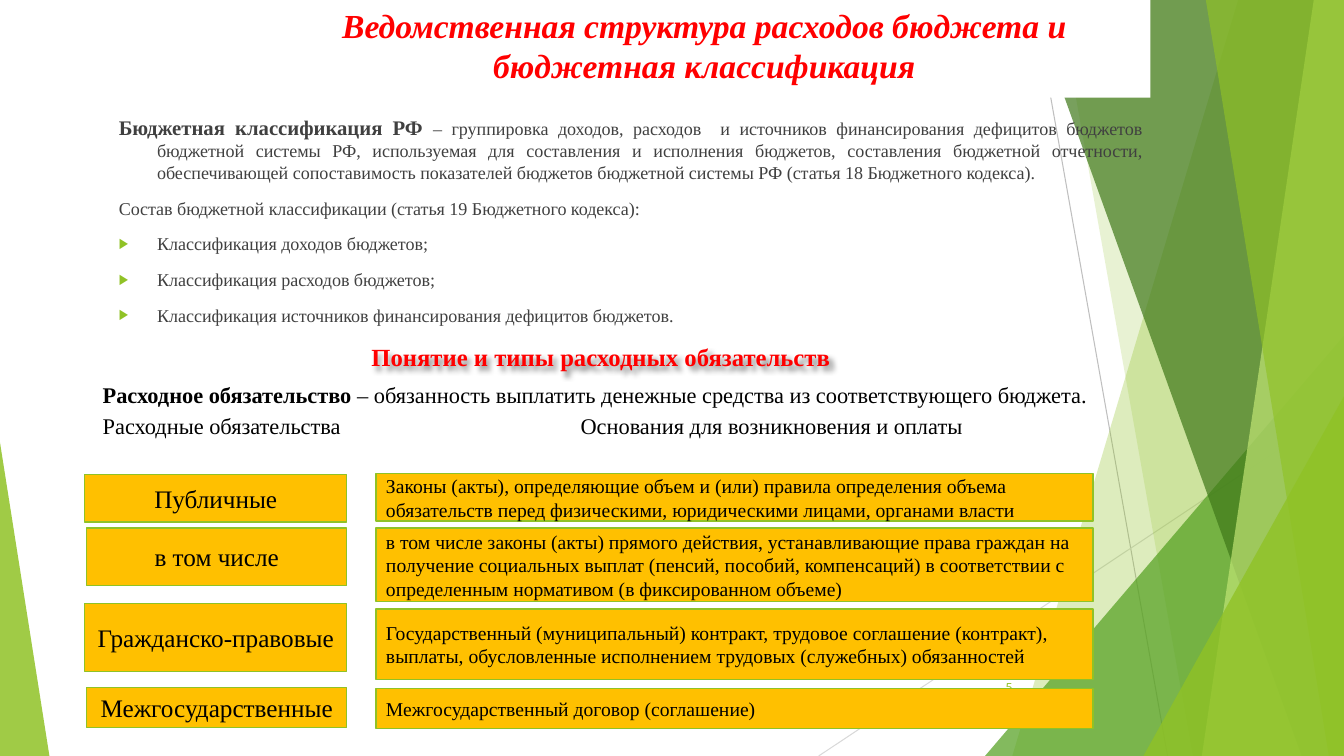
"""Build the slide on budget structure and types of spending obligations."""
from lxml.etree import SubElement
from pptx import Presentation
from pptx.dml.color import RGBColor
from pptx.enum.shapes import MSO_CONNECTOR as Connector, MSO_SHAPE as Shape
from pptx.enum.text import MSO_ANCHOR as Anchor, PP_ALIGN as Align
from pptx.oxml.ns import qn
from pptx.util import Inches, Pt

COLORS = {
    "lime": "90C226", "green": "54A021", "dark": "3F7819", "pale": "C0E474",
    "amber": "FFC000", "red": "FF0000", "black": "000000", "gray": "404040",
    "white": "FFFFFF", "line": "BFBFBF", "light_line": "D9D9D9",
}
WIDTH, HEIGHT = 13.33, 7.5


class Page:
    def __init__(self, deck, font):
        self.slide = deck.slides.add_slide(deck.slide_layouts[5])
        self.shapes = self.slide.shapes
        self.font = font

    def color(self, name):
        return RGBColor.from_string(COLORS[name])

    def paint(self, shape, fill, alpha=100, line=None):
        shape.shadow.inherit = False
        shape.fill.solid()
        shape.fill.fore_color.rgb = self.color(fill)
        if alpha < 100:
            tint = shape.fill._xPr.find(".//" + qn("a:srgbClr"))
            SubElement(tint, qn("a:alpha"), val=str(alpha * 1000))
        if line:
            shape.line.color.rgb = self.color(line)
            shape.line.width = Pt(1)
        else:
            shape.line.fill.background()

    def span(self, para, text, size, color, bold=False, italic=False, font=None):
        span = para.add_run()
        span.text = text
        span.font.name = font or self.font
        span.font.size = Pt(size)
        span.font.bold = bold
        span.font.italic = italic
        span.font.color.rgb = self.color(color)

    def frame(self, shape, anchor=Anchor.TOP):
        frame = shape.text_frame
        frame.word_wrap = True
        frame.vertical_anchor = anchor
        frame.margin_left = frame.margin_right = Inches(0.1)
        frame.margin_top = frame.margin_bottom = Inches(0.05)
        return frame

    def title(self, text, place):
        title = self.shapes.title
        title.left, title.top, title.width, title.height = map(Inches, place)
        self.paint(title, "white")
        para = self.frame(title).paragraphs[0]
        para.alignment = Align.CENTER
        self.span(para, text, 24, "red", True, True)
        title.element.getparent().append(title.element)

    def text(self, place, paragraphs, align=None, anchor=Anchor.TOP, before=0):
        box = self.shapes.add_textbox(*map(Inches, place))
        frame = self.frame(box, anchor)
        for index, spans in enumerate(paragraphs):
            para = frame.add_paragraph() if index else frame.paragraphs[0]
            para.alignment = align
            para.space_before = Pt(before)
            for span in spans:
                self.span(para, *span)
        return box

    def hang(self, para, indent, bullet=None):
        props = para._p.get_or_add_pPr()
        props.set("marL", str(Inches(indent)))
        props.set("indent", str(-Inches(indent)))
        if bullet:
            tint = SubElement(props, qn("a:buClr"))
            SubElement(tint, qn("a:srgbClr"), val=COLORS["lime"])
            SubElement(props, qn("a:buSzPct"), val="80000")
            SubElement(props, qn("a:buFont"), typeface="Arial")
            SubElement(props, qn("a:buChar"), char=bullet)

    def tab(self, para, position):
        tabs = SubElement(para._p.get_or_add_pPr(), qn("a:tabLst"))
        SubElement(tabs, qn("a:tab"), pos=str(Inches(position)), algn="l")

    def text_shadow(self, box):
        effects = SubElement(box.element.spPr, qn("a:effectLst"))
        shadow = SubElement(effects, qn("a:outerShdw"), blurRad="38100",
                            dist="38100", dir="2700000")
        tint = SubElement(shadow, qn("a:srgbClr"), val=COLORS["black"])
        SubElement(tint, qn("a:alpha"), val="43000")

    def box(self, place, text, size, align):
        box = self.shapes.add_shape(Shape.RECTANGLE, *map(Inches, place))
        self.paint(box, "amber", line="lime")
        para = self.frame(box, Anchor.MIDDLE).paragraphs[0]
        para.alignment = align
        self.span(para, text, size, "black")

    def line(self, ends, color):
        line = self.shapes.add_connector(Connector.STRAIGHT, *map(Inches, ends))
        line.line.color.rgb = self.color(color)
        line.line.width = Pt(0.75)
        SubElement(line.element.spPr, qn("a:effectLst"))

    def band(self, top_x, bottom_x, color, alpha):
        builder = self.shapes.build_freeform(Inches(top_x), 0)
        corners = [(WIDTH, 0), (WIDTH, HEIGHT), (bottom_x, HEIGHT)]
        builder.add_line_segments([(Inches(x), Inches(y)) for x, y in corners])
        self.paint(builder.convert_to_shape(), color, alpha)

    def triangle(self, left, top, width, apex, color, alpha):
        place = (left, top, width, HEIGHT - top)
        shape = self.shapes.add_shape(Shape.ISOSCELES_TRIANGLE, *map(Inches, place))
        shape.adjustments[0] = apex
        self.paint(shape, color, alpha)


def draw_backdrop(page):
    page.line((10.25, 0, 11.58, HEIGHT), "line")
    page.line((WIDTH, 4.03, 8.12, HEIGHT), "light_line")
    page.band(12.28, 10.04, "lime", 30)
    page.band(10.5, 11.83, "lime", 20)
    page.triangle(9.77, 3.33, 3.56, 1, "green", 72)
    page.band(10.21, 12.91, "dark", 70)
    page.band(13.03, 11.92, "pale", 70)
    page.band(11.96, 13.18, "lime", 65)
    page.triangle(11.34, 3.93, 1.99, 1, "lime", 80)
    page.triangle(0, 4.39, 0.49, 0, "lime", 85)


def draw_classification(page):
    lines = [
        "Состав бюджетной классификации (статья 19 Бюджетного кодекса):",
        "Классификация доходов бюджетов;",
        "Классификация расходов бюджетов;",
        "Классификация источников финансирования дефицитов бюджетов.",
    ]
    definition = [
        ("Бюджетная классификация РФ ", 14.8, "gray", True),
        ("– группировка доходов, расходов  и источников финансирования дефицитов "
         "бюджетов бюджетной системы РФ, используемая для составления и исполнения "
         "бюджетов, составления бюджетной отчетности, обеспечивающей сопоставимость "
         "показателей бюджетов бюджетной системы РФ (статья 18 Бюджетного кодекса).",
         12.9, "gray"),
    ]
    paragraphs = [definition] + [[(line, 12.9, "gray")] for line in lines]
    box = page.text((1.08, 1.09, 10.35, 2.27), paragraphs, before=10)
    for index, para in enumerate(box.text_frame.paragraphs):
        page.hang(para, 0.38, "▶" if index > 1 else None)
    box.text_frame.paragraphs[0].alignment = Align.JUSTIFY


def draw_obligations(page):
    box = page.text((0.92, 3.73, 10.15, 0.81), [
        [("Расходное обязательство ", 16, "black", True),
         ("– обязанность выплатить денежные средства из соответствующего бюджета.",
          16, "black")],
        [("Расходные обязательства\tОснования для возникновения и оплаты", 16, "black")],
    ], before=3.2)
    page.tab(box.text_frame.paragraphs[1], 4.74)
    heading = [("Понятие и типы расходных обязательств", 17.6, "red", True)]
    page.text_shadow(page.text((1.08, 3.27, 9.76, 0.53), [heading],
                               Align.CENTER, Anchor.MIDDLE))
    rows = [
        (0.84, 4.71, 0.47, "Публичные", 4.7, 0.47,
         "Законы (акты), определяющие объем и (или) правила определения объема "
         "обязательств перед физическими, юридическими лицами, органами власти"),
        (0.86, 5.24, 0.57, "в том числе", 5.24, 0.73,
         "в том числе законы (акты) прямого действия, устанавливающие права граждан на "
         "получение социальных выплат (пенсий, пособий, компенсаций) в соответствии с "
         "определенным нормативом (в фиксированном объеме)"),
        (0.84, 5.99, 0.67, "Гражданско-правовые", 6.04, 0.7,
         "Государственный (муниципальный) контракт, трудовое соглашение (контракт), "
         "выплаты, обусловленные исполнением трудовых (служебных) обязанностей"),
        (0.86, 6.82, 0.4, "Межгосударственные", 6.83, 0.4,
         "Межгосударственный договор (соглашение)"),
    ]
    for left, top, height, kind, basis_top, basis_height, basis in rows:
        page.box((left, top, 3.44 - left, height), kind, 18, Align.CENTER)
        page.box((3.73, basis_top, 7.11, basis_height), basis, 14, Align.LEFT)


def main():
    deck = Presentation()
    deck.slide_width, deck.slide_height = Inches(WIDTH), Inches(HEIGHT)
    page = Page(deck, "Times New Roman")
    draw_backdrop(page)
    page.title("Ведомственная структура расходов бюджета и бюджетная классификация",
               (2.56, 0, 8.85, 0.97))
    draw_classification(page)
    page.text((9.39, 6.61, 0.75, 0.4), [[("5", 9, "lime", False, False, "Karla")]],
              Align.RIGHT, Anchor.MIDDLE)
    draw_obligations(page)
    deck.save("out.pptx")


if __name__ == "__main__":
    main()
